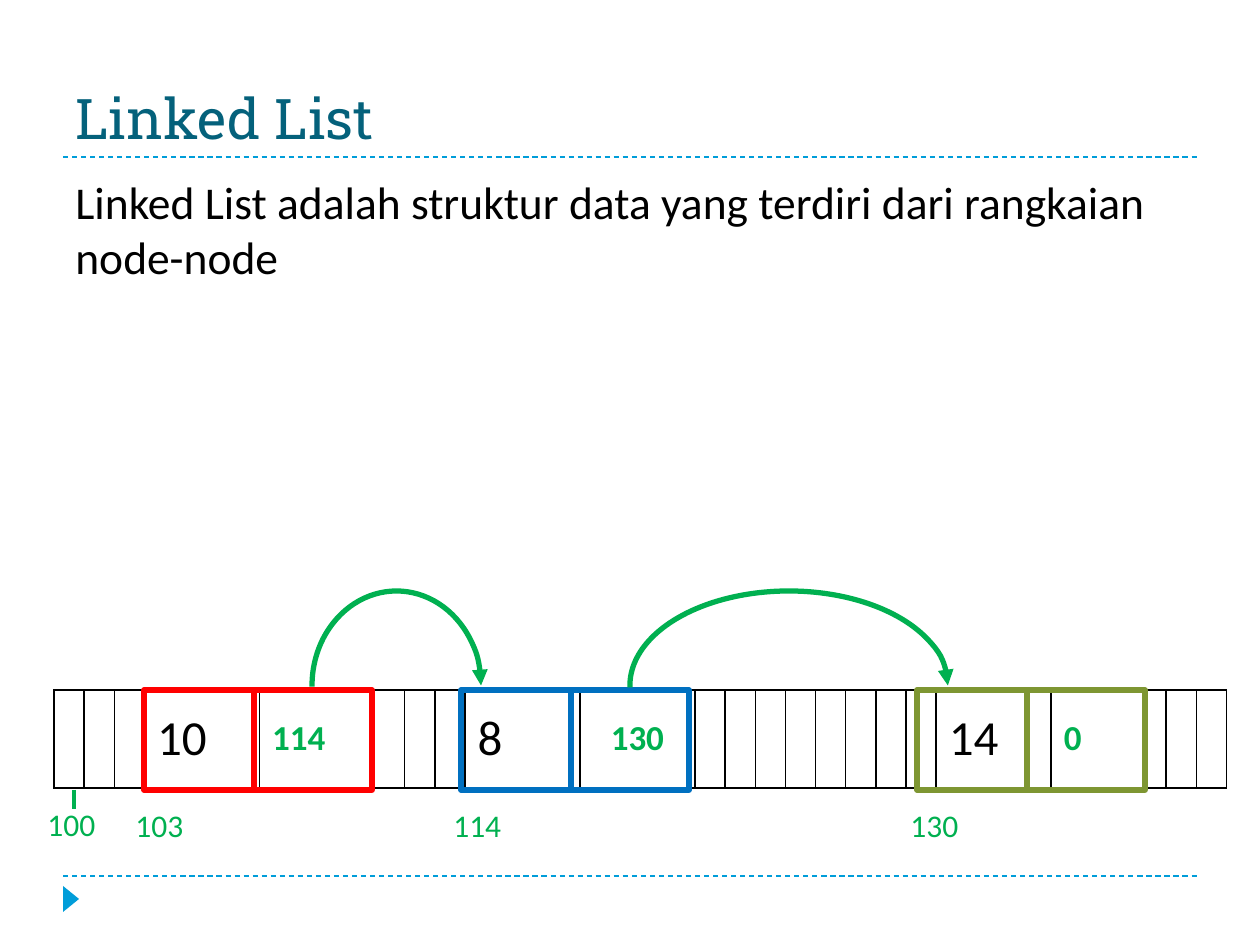
from dataclasses import dataclass

from lxml.etree import SubElement
from pptx import Presentation
from pptx.dml.color import RGBColor
from pptx.enum.dml import MSO_LINE
from pptx.enum.shapes import MSO_CONNECTOR, MSO_SHAPE
from pptx.enum.text import MSO_ANCHOR, MSO_AUTO_SIZE, PP_ALIGN
from pptx.oxml import parse_xml
from pptx.oxml.ns import nsdecls, qn
from pptx.util import Emu, Pt


@dataclass(frozen=True)
class Theme:
    heading_font: str = "Roboto Slab"
    body_font: str = "Calibri"
    title: RGBColor = RGBColor.from_string("04617B")
    accent: RGBColor = RGBColor.from_string("009DD9")
    text: RGBColor = RGBColor.from_string("000000")
    address: RGBColor = RGBColor.from_string("00B050")
    red: RGBColor = RGBColor.from_string("FF0000")
    blue: RGBColor = RGBColor.from_string("0070C0")
    olive: RGBColor = RGBColor.from_string("7E9632")
    title_size: int = 32
    body_size: int = 26
    value_size: int = 28
    pointer_size: int = 20
    label_size: int = 18


THEME = Theme()
SCALE = 914400 / 126


def px(*lengths):
    """Turn pixel lengths into EMU."""
    return [Emu(round(length * SCALE)) for length in lengths]


def write(frame, text, size, color, font=THEME.body_font, bold=False):
    paragraph = frame.paragraphs[0]
    paragraph.text = text
    paragraph.font.name = font
    paragraph.font.size = Pt(size)
    paragraph.font.color.rgb = color
    paragraph.font.bold = bold
    return paragraph


presentation = Presentation()
presentation.slide_width, presentation.slide_height = px(1260, 945)
slide = presentation.slides.add_slide(presentation.slide_layouts[6])
shapes = slide.shapes

# Rules, footer marker and the tick under address 100
for x1, y1, x2, y2, color, width, dash in (
    (63, 876, 1197, 876, THEME.accent, 0.75, MSO_LINE.DASH),
    (63, 157, 1197, 157, THEME.accent, 0.75, MSO_LINE.DASH),
    (74, 790, 74, 809, THEME.address, 2.25, None),
):
    rule = shapes.add_connector(MSO_CONNECTOR.STRAIGHT, *px(x1, y1, x2, y2))
    rule.line.color.rgb = color
    rule.line.width = Pt(width)
    rule.line.dash_style = dash
    SubElement(rule._element.spPr, qn("a:effectLst"))

marker = shapes.add_shape(MSO_SHAPE.ISOSCELES_TRIANGLE, *px(58, 891, 26, 16))
marker.rotation = 90
marker.shadow.inherit = False
marker.fill.solid()
marker.fill.fore_color.rgb = THEME.accent
marker.line.fill.background()

# Title and definition
title = shapes.add_textbox(*px(63, 21, 1134, 136)).text_frame
title.word_wrap = True
title.vertical_anchor = MSO_ANCHOR.BOTTOM
write(title, "Linked List", THEME.title_size, THEME.title, THEME.heading_font)

body = shapes.add_textbox(*px(63, 168, 1134, 680)).text_frame
body.word_wrap = True
definition = write(
    body,
    "Linked List adalah struktur data yang terdiri dari rangkaian node-node",
    THEME.body_size,
    THEME.text,
)
definition.space_before = Pt(6)

# Memory strip: narrow free cells, wide cells for each node's value and pointer
NARROW, WIDE = 30, 115
STRIP_TOP, STRIP_HEIGHT = 690, 98
cell_texts = (
    [""] * 3 + ["10", "114"] + [""] * 3 + ["8", "130"]
    + [""] * 8 + ["14", "0"] + [""] * 2
)
value_texts = ("10", "8", "14")
widths = [WIDE if text else NARROW for text in cell_texts]
memory = shapes.add_table(
    1, len(widths), *px(54, STRIP_TOP, sum(widths), STRIP_HEIGHT)
).table
memory.first_row = False
memory.horz_banding = False
memory.rows[0].height = px(STRIP_HEIGHT)[0]
for column, (width, text) in enumerate(zip(widths, cell_texts)):
    memory.columns[column].width = px(width)[0]
    cell = memory.cell(0, column)
    cell.vertical_anchor = MSO_ANCHOR.MIDDLE
    properties = cell._tc.get_or_add_tcPr()
    for side in ("lnL", "lnR", "lnT", "lnB"):
        properties.append(parse_xml(
            f'<a:{side} {nsdecls("a")} w="12700"><a:solidFill>'
            f'<a:srgbClr val="{THEME.text}"/></a:solidFill></a:{side}>'
        ))
    cell.fill.background()
    if text in value_texts:
        write(cell.text_frame, text, THEME.value_size, THEME.text)
    elif text:
        pointer = write(
            cell.text_frame, text, THEME.pointer_size, THEME.address, bold=True
        )
        if text == "130":
            pointer.alignment = PP_ALIGN.CENTER

# Address labels
for address, left in (("100", 35), ("103", 123), ("114", 441), ("130", 898)):
    label = shapes.add_textbox(*px(left, 799 if address == "100" else 800, 74, 50))
    label.text_frame.word_wrap = False
    label.text_frame.auto_size = MSO_AUTO_SIZE.SHAPE_TO_FIT_TEXT
    write(label.text_frame, address, THEME.label_size, THEME.address)

# Node outlines: a value box followed by a pointer box
VALUE_WIDTH, POINTER_WIDTH = 110, 118
outlines = []
for left, color in ((144, THEME.red), (461, THEME.blue), (917, THEME.olive)):
    for offset, width in ((0, VALUE_WIDTH), (VALUE_WIDTH, POINTER_WIDTH)):
        box = shapes.add_shape(
            MSO_SHAPE.RECTANGLE, *px(left + offset, STRIP_TOP, width, 100)
        )
        outlines.append((box, color))

# Arcs from each pointer to the next node
for left, width in ((312, 169), (630, 318)):
    arc = shapes.add_shape(MSO_SHAPE.ARC, *px(left, 591, width, 189))
    arc.adjustments[0] = 107.57
    arc.adjustments[1] = 0
    outlines.append((arc, THEME.address))

for shape, color in outlines:
    shape.shadow.inherit = False
    shape.fill.background()
    shape.line.color.rgb = color
    shape.line.width = Pt(3)
    if shape.auto_shape_type == MSO_SHAPE.ARC:
        SubElement(shape.line._get_or_add_ln(), qn("a:tailEnd"), type="triangle")

presentation.save("out.pptx")
